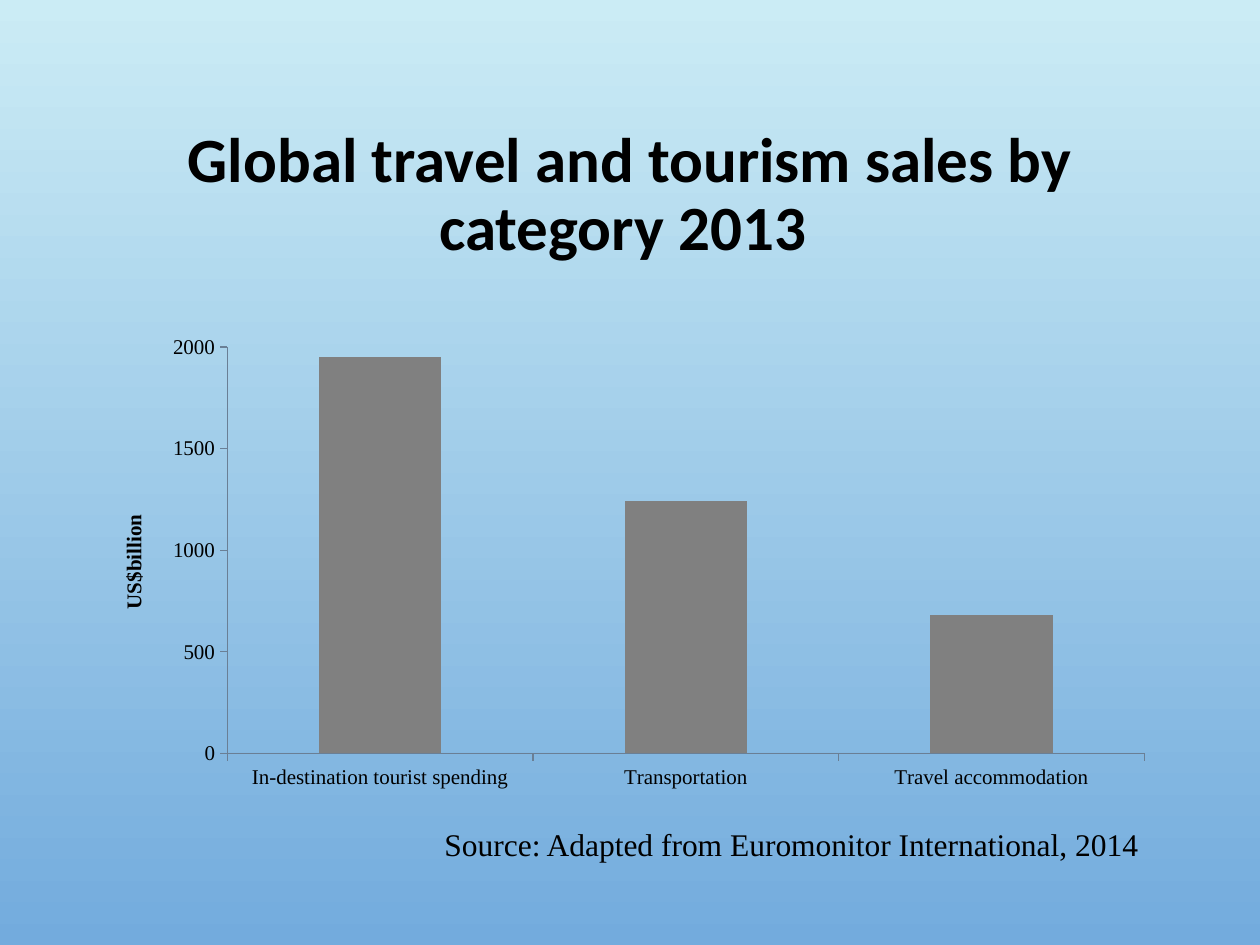
from dataclasses import dataclass

from pptx import Presentation
from pptx.chart.data import CategoryChartData
from pptx.dml.color import RGBColor
from pptx.enum.chart import XL_CHART_TYPE, XL_TICK_MARK
from pptx.enum.text import MSO_ANCHOR, PP_ALIGN
from pptx.util import Cm, Pt

COLUMN = XL_CHART_TYPE.COLUMN_CLUSTERED
OUT = XL_TICK_MARK.OUTSIDE
TOP, MIDDLE = MSO_ANCHOR.TOP, MSO_ANCHOR.MIDDLE
LEFT, CENTER = PP_ALIGN.LEFT, PP_ALIGN.CENTER


@dataclass(frozen=True)
class Theme:
    sky: RGBColor = RGBColor(0xCB, 0xEC, 0xF5)
    sea: RGBColor = RGBColor(0x73, 0xAB, 0xDD)
    ink: RGBColor = RGBColor(0, 0, 0)
    bar: RGBColor = RGBColor(0x80, 0x80, 0x80)
    axis: RGBColor = RGBColor(0x6A, 0x7F, 0x95)
    head: str = "Calibri"
    body: str = "Times New Roman"
    title: int = 36
    note: int = 18
    label: int = 12


class Page:
    def __init__(self, slide, theme):
        self.slide = slide
        self.theme = theme

    def style(self, font, name, size, bold=False):
        font.name = name
        font.size = Pt(size)
        font.bold = bold
        font.color.rgb = self.theme.ink

    def backdrop(self):
        fill = self.slide.background.fill
        fill.gradient()
        fill.gradient_angle = 270
        for stop, color in zip(fill.gradient_stops, (self.theme.sky, self.theme.sea)):
            stop.color.rgb = color

    def text(self, box, words, name, size, bold=False, align=LEFT, anchor=TOP, space=1.0):
        frame = self.slide.shapes.add_textbox(*map(Cm, box)).text_frame
        frame.word_wrap = True
        frame.vertical_anchor = anchor
        para = frame.paragraphs[0]
        para.text = words
        para.alignment = align
        para.line_spacing = space
        self.style(para.font, name, size, bold)

    def columns(self, box, sales, unit):
        theme = self.theme
        data = CategoryChartData()
        data.categories = list(sales)
        data.add_series("Series 1", list(sales.values()))
        chart = self.slide.shapes.add_chart(COLUMN, *map(Cm, box), data).chart
        chart.has_legend = False
        chart.has_title = False
        self.style(chart.font, theme.body, theme.label)

        # Bars
        plot = chart.plots[0]
        plot.gap_width = 150
        plot.vary_by_categories = False
        fill = plot.series[0].format.fill
        fill.solid()
        fill.fore_color.rgb = theme.bar

        # Axes
        for axis in (chart.category_axis, chart.value_axis):
            axis.has_major_gridlines = False
            axis.major_tick_mark = OUT
            axis.format.line.color.rgb = theme.axis
            axis.format.line.width = Pt(0.75)
        scale = chart.value_axis
        scale.minimum_scale = 0
        scale.maximum_scale = 2000
        scale.major_unit = 500
        para = scale.axis_title.text_frame.paragraphs[0]
        para.text = unit
        self.style(para.font, theme.body, theme.label, bold=True)


def main():
    deck = Presentation()
    deck.slide_width, deck.slide_height = Cm(25.4), Cm(19.05)
    theme = Theme()
    page = Page(deck.slides.add_slide(deck.slide_layouts[6]), theme)
    page.backdrop()

    # Title
    page.text((1.9, 1.73, 21.6, 4.45), "Global travel and tourism sales by category 2013 ",
              theme.head, theme.title, bold=True, align=CENTER, anchor=MIDDLE, space=0.9)

    # Sales chart
    sales = {
        "In-destination tourist spending": 1950,
        "Transportation": 1240,
        "Travel accommodation": 680,
    }
    page.columns((1.9, 6.58, 21.6, 9.5), sales, "US$billion")

    # Source line
    page.text((8.71, 16.51, 14.8, 1.02), "Source: Adapted from Euromonitor International, 2014",
              theme.body, theme.note)

    deck.save("out.pptx")


if __name__ == "__main__":
    main()
